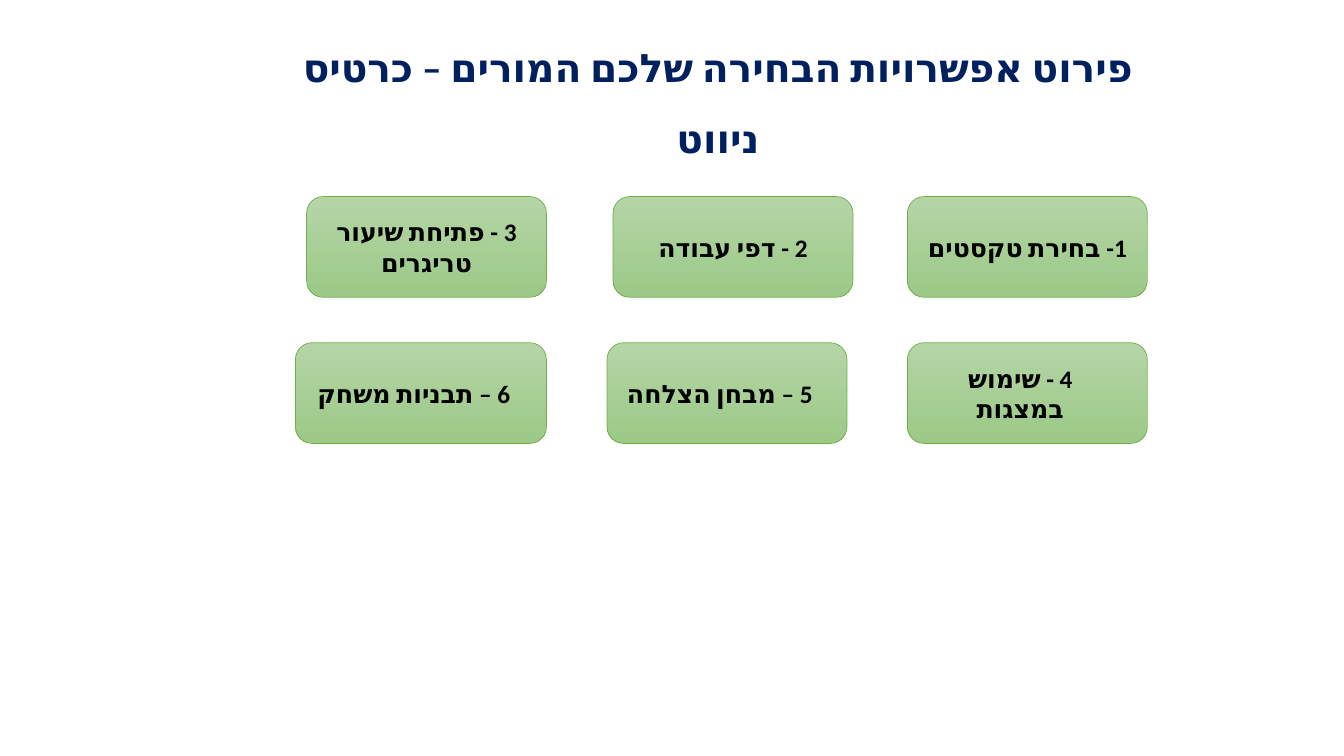
from dataclasses import dataclass

from pptx import Presentation
from pptx.dml.color import RGBColor
from pptx.enum import shapes, text
from pptx.oxml.ns import qn
from pptx.util import Inches, Pt

TITLE = "פירוט אפשרויות הבחירה שלכם המורים – כרטיס ניווט"
TITLE_BOX = (2.79, 0.15, 8.66, 0.75)

# Each row: top, extra right inset, cards as (left, width, label)
CARD_ROWS = [
    (1.95, 0, [
        (9, 2.38, "1- בחירת טקסטים"),
        (6.08, 2.38, "2 - דפי עבודה"),
        (3.04, 2.38, "3 - פתיחת שיעור טריגרים"),
    ]),
    (3.4, 0.14, [
        (9, 2.38, "4 - שימוש במצגות"),
        (6.02, 2.38, "5 – מבחן הצלחה"),
        (2.93, 2.49, "6 – תבניות משחק"),
    ]),
]
CARD_HEIGHT = 1
INSET = 0.1


@dataclass(frozen=True)
class Theme:
    font: str = "Calibri"
    title_size: int = 28
    card_size: int = 18
    title_color: str = "002060"
    card_text: str = "000000"
    card_top: str = "B5D5A7"
    card_bottom: str = "9CC987"
    card_line: str = "70AD47"


THEME = Theme()


def write_text(shape, content, *, size, color, anchor, line_spacing=1.0, space_after=0):
    """Write one bold, centred, right-to-left paragraph."""
    frame = shape.text_frame
    frame.word_wrap = True
    frame.vertical_anchor = anchor
    paragraph = frame.paragraphs[0]
    paragraph.alignment = text.PP_ALIGN.CENTER
    paragraph.line_spacing = line_spacing
    paragraph.space_after = Pt(space_after)
    paragraph._p.get_or_add_pPr().set("rtl", "1")
    run = paragraph.add_run()
    run.text = content
    run.font.name = THEME.font
    run.font.size = Pt(size)
    run.font.bold = True
    run.font.color.rgb = RGBColor.from_string(color)
    properties = run._r.get_or_add_rPr()
    properties.set("lang", "he-IL")
    complex_font = properties.makeelement(qn("a:cs"), {"typeface": THEME.font})
    properties.append(complex_font)


def add_title(slide):
    title = slide.shapes.title
    title.left, title.top, title.width, title.height = map(Inches, TITLE_BOX)
    write_text(title, TITLE, size=THEME.title_size, color=THEME.title_color,
               anchor=text.MSO_ANCHOR.TOP, line_spacing=1.5, space_after=8)
    title.text_frame.auto_size = text.MSO_AUTO_SIZE.SHAPE_TO_FIT_TEXT


def add_card(slide, left, top, width, label, extra_inset):
    card = slide.shapes.add_shape(
        shapes.MSO_SHAPE.ROUNDED_RECTANGLE,
        Inches(left), Inches(top), Inches(width), Inches(CARD_HEIGHT))
    card.shadow.inherit = False
    card.fill.gradient()
    card.fill.gradient_angle = 270
    for stop, color in zip(card.fill.gradient_stops, (THEME.card_top, THEME.card_bottom)):
        stop.color.rgb = RGBColor.from_string(color)
    card.line.color.rgb = RGBColor.from_string(THEME.card_line)
    card.line.width = Pt(0.5)
    card.text_frame.margin_right = Inches(INSET + extra_inset)
    write_text(card, label, size=THEME.card_size, color=THEME.card_text,
               anchor=text.MSO_ANCHOR.MIDDLE)


def main():
    presentation = Presentation()
    presentation.slide_width = Inches(13.33)
    presentation.slide_height = Inches(7.5)
    slide = presentation.slides.add_slide(presentation.slide_layouts.get_by_name("Title Only"))
    add_title(slide)
    for top, extra_inset, cards in CARD_ROWS:
        for left, width, label in cards:
            add_card(slide, left, top, width, label, extra_inset)
    presentation.save("out.pptx")


if __name__ == "__main__":
    main()
